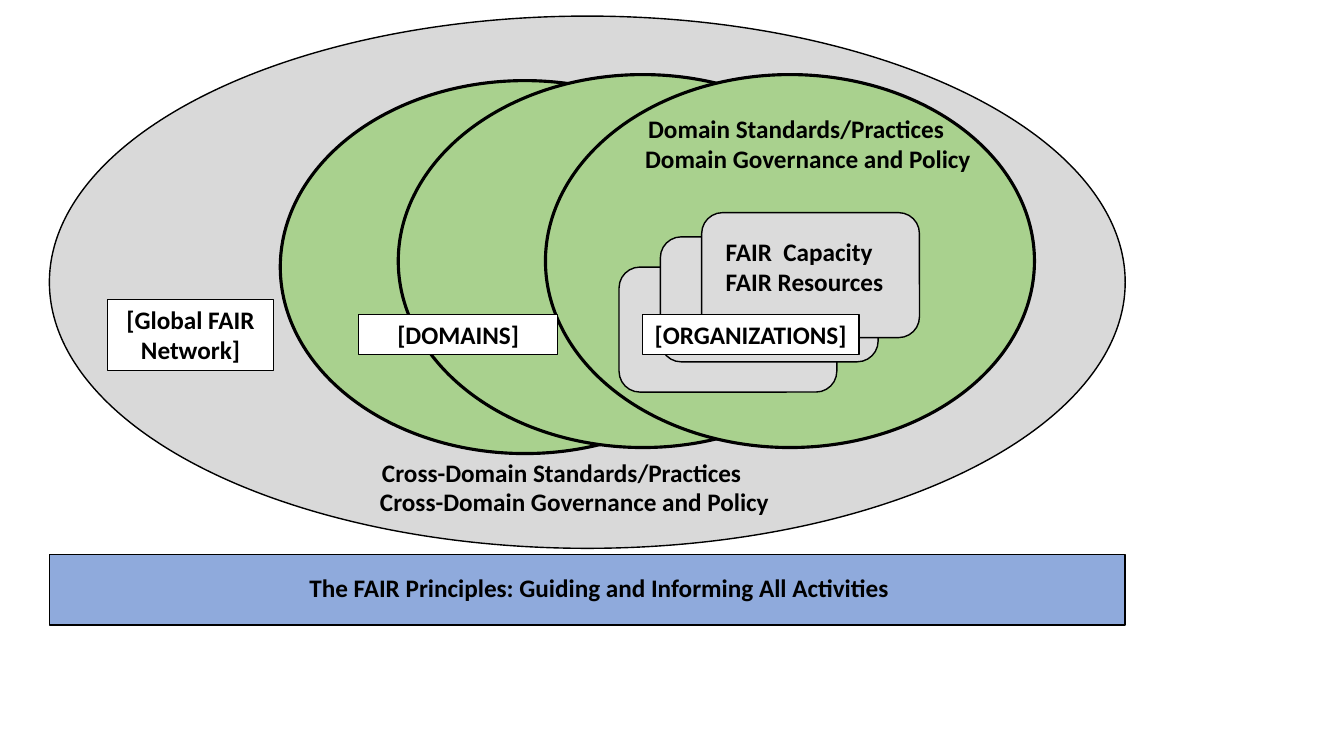
from pptx import Presentation
from pptx.dml.color import RGBColor
from pptx.enum.shapes import MSO_SHAPE
from pptx.enum.text import MSO_AUTO_SIZE, PP_ALIGN
from pptx.util import Inches, Pt

BLACK = RGBColor(0x00, 0x00, 0x00)
WHITE = RGBColor(0xFF, 0xFF, 0xFF)
BLUE = RGBColor(0x8F, 0xAA, 0xDC)
GREEN = RGBColor(0xA9, 0xD1, 0x8E)
LIGHT_GRAY = RGBColor(0xD9, 0xD9, 0xD9)
CARD_GRAY = RGBColor(0xDB, 0xDB, 0xDB)


class DiagramSlide:
    """Draws outlined shapes and bold text on one slide."""

    font_name = "Calibri"
    font_size = Pt(18)

    def __init__(self, page):
        self.page = page

    def paint(self, shape, fill, line_width):
        shape.fill.solid()
        shape.fill.fore_color.rgb = fill
        shape.line.color.rgb = BLACK
        shape.line.width = Pt(line_width)

    def shape(self, kind, left, top, width, height, fill, line_width=1):
        shape = self.page.shapes.add_shape(
            kind, Inches(left), Inches(top), Inches(width), Inches(height))
        shape.shadow.inherit = False
        self.paint(shape, fill, line_width)

    def text(self, left, top, width, height, lines, align=PP_ALIGN.LEFT, wrap=False):
        box = self.page.shapes.add_textbox(
            Inches(left), Inches(top), Inches(width), Inches(height))
        frame = box.text_frame
        frame.word_wrap = wrap
        frame.auto_size = MSO_AUTO_SIZE.SHAPE_TO_FIT_TEXT
        frame.text = "\n".join(lines)
        for paragraph in frame.paragraphs:
            paragraph.alignment = align
            paragraph.font.name = self.font_name
            paragraph.font.size = self.font_size
            paragraph.font.bold = True
            paragraph.font.color.rgb = BLACK
        return box

    def label(self, left, top, width, height, lines):
        box = self.text(left, top, width, height, lines, PP_ALIGN.CENTER, True)
        self.paint(box, WHITE, 0.75)


def main():
    deck = Presentation()
    deck.slide_width, deck.slide_height = Inches(13.33), Inches(7.5)
    diagram = DiagramSlide(deck.slides.add_slide(deck.slide_layouts[6]))

    diagram.shape(MSO_SHAPE.RECTANGLE, 0.49, 5.5, 10.67, 0.7, BLUE)
    diagram.text(2.97, 5.63, 6, 0.4,
                 ["The FAIR Principles: Guiding and Informing All Activities"])

    diagram.shape(MSO_SHAPE.OVAL, 0.49, 0.16, 10.67, 5.28, LIGHT_GRAY)
    for left, top in [(2.78, 0.8), (3.95, 0.74), (5.41, 0.74)]:
        diagram.shape(MSO_SHAPE.OVAL, left, top, 4.85, 3.7, GREEN, 2.25)
    for left, top in [(6.14, 2.65), (6.55, 2.35), (6.96, 2.11)]:
        diagram.shape(MSO_SHAPE.ROUNDED_RECTANGLE, left, top, 2.16, 1.24, CARD_GRAY)
    diagram.text(7.1, 2.29, 1.77, 0.71, ["FAIR  Capacity", "FAIR Resources"])

    diagram.label(3.56, 3.12, 1.97, 0.4, ["[DOMAINS]"])
    diagram.label(6.37, 3.12, 2.15, 0.4, ["[ORGANIZATIONS]"])
    diagram.label(1.07, 2.97, 1.64, 0.71, ["[Global FAIR", "Network]"])

    for left, top, width, caption in [
        (6.33, 1.08, 3.16, "Domain Standards/Practices"),
        (6.3, 1.37, 3.46, "Domain Governance and Policy"),
        (3.69, 4.49, 3.79, "Cross-Domain Standards/Practices"),
        (3.67, 4.78, 4.09, "Cross-Domain Governance and Policy"),
    ]:
        diagram.text(left, top, width, 0.4, [caption])

    deck.save("out.pptx")


if __name__ == "__main__":
    main()
